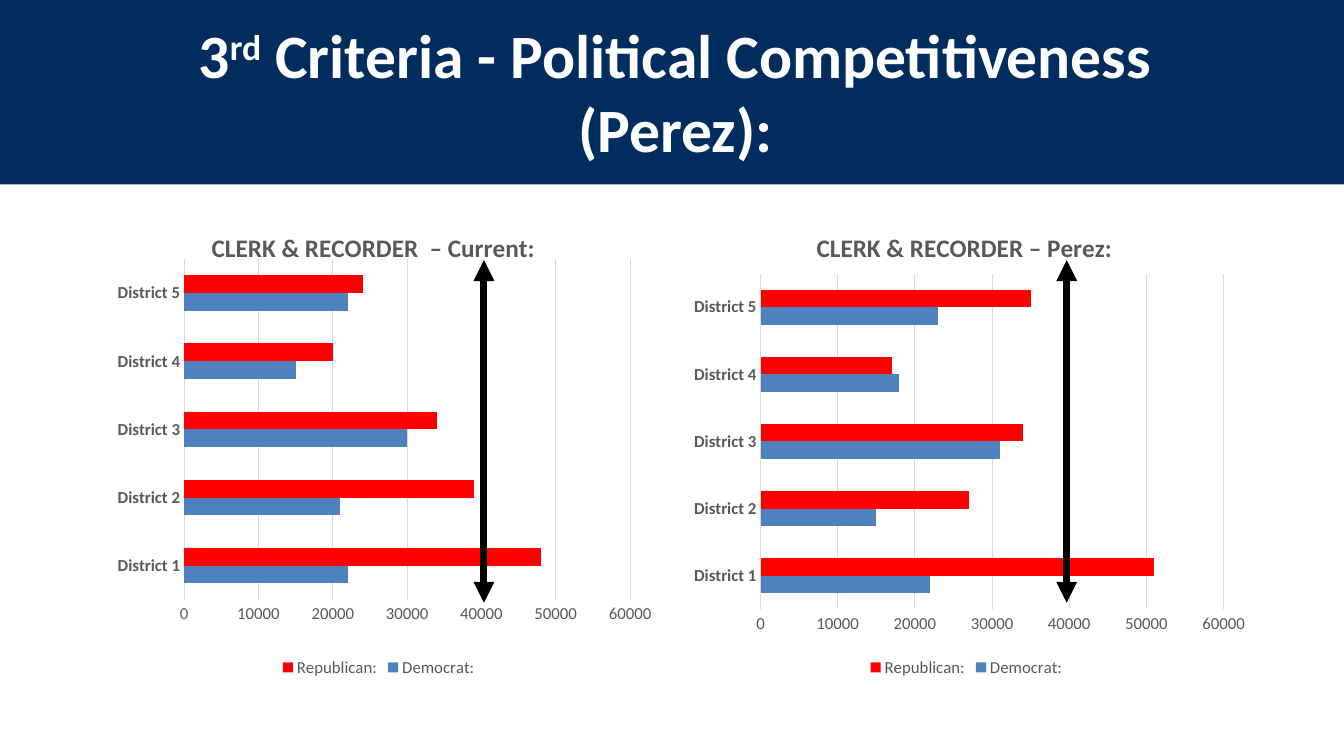
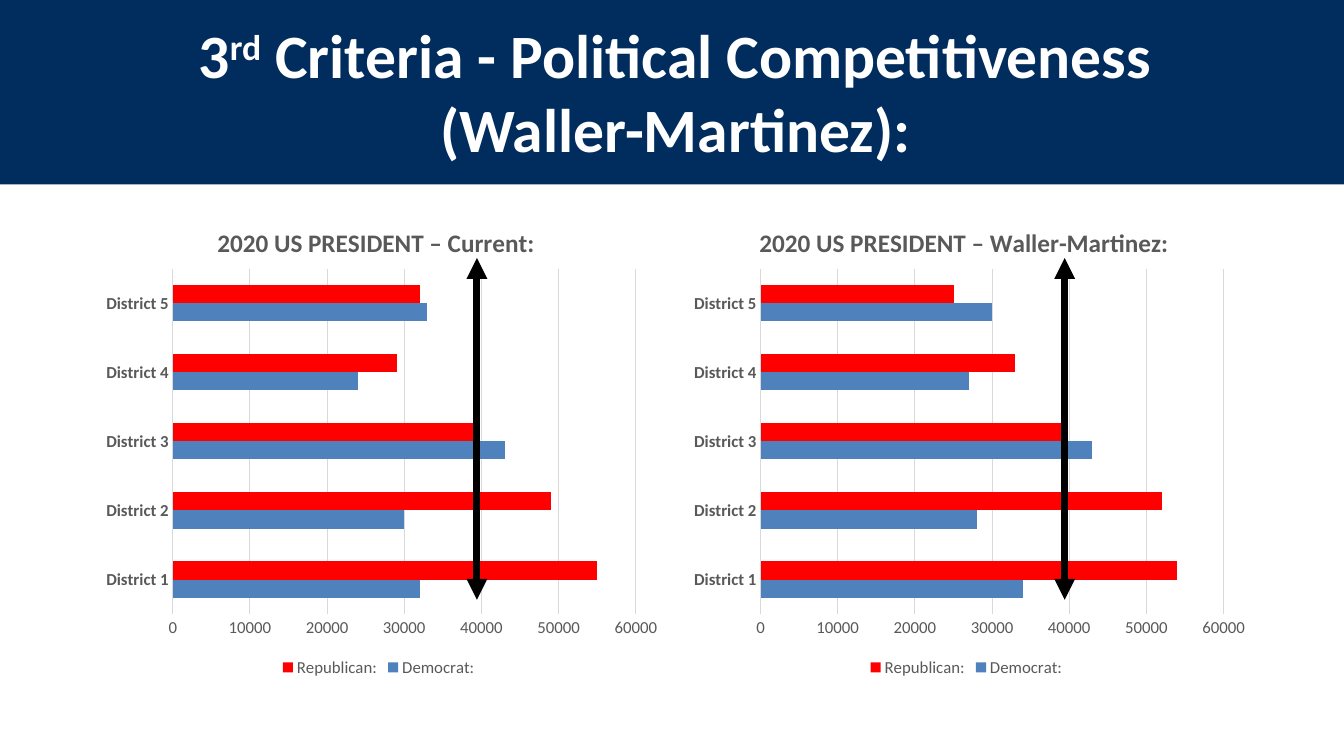
from lxml import etree
from pptx import Presentation
from pptx.chart.data import CategoryChartData
from pptx.dml.color import RGBColor
from pptx.enum.chart import XL_CHART_TYPE, XL_LEGEND_POSITION, XL_TICK_MARK
from pptx.enum.shapes import MSO_CONNECTOR, MSO_SHAPE
from pptx.enum.text import PP_ALIGN
from pptx.oxml.ns import qn
from pptx.util import Pt

PX = 9144
WIDE, HIGH = 1333, 750
FONT = "Calibri"
BARS = XL_CHART_TYPE.BAR_CLUSTERED
BOTTOM = XL_LEGEND_POSITION.BOTTOM
NO_TICK = XL_TICK_MARK.NONE
RECT = MSO_SHAPE.RECTANGLE
LINE = MSO_CONNECTOR.STRAIGHT
CENTER = PP_ALIGN.CENTER
COLORS = {
    "navy": "002D5D",
    "white": "FFFFFF",
    "black": "000000",
    "gray": "595959",
    "grid": "D9D9D9",
    "Democrat:": "4F81BD",
    "Republican:": "FF0000",
}
CATS = [f"District {n}" for n in range(1, 6)]
LEFTS = (92, 675)
CHART_TOP, CHART_WIDE, CHART_HIGH = 200, 567, 476

SLIDES = [
    {
        "plan": "Perez",
        "race": "CLERK & RECORDER",
        "arrow_top": 258,
        "arrow_high": 340,
        "charts": [
            {
                "title": "CLERK & RECORDER  – Current:",
                "spot": (0.2, 0.05),
                "plot": (0.16, 0.12, 0.78, 0.71),
                "arrow": 480,
                "dem": (22000, 21000, 30000, 15000, 22000),
                "rep": (48000, 39000, 34000, 20000, 24000),
            },
            {
                "title": "CLERK & RECORDER – Perez:",
                "spot": (0.23, 0.05),
                "plot": (0.14, 0.15, 0.81, 0.7),
                "arrow": 1058,
                "dem": (22000, 15000, 31000, 18000, 23000),
                "rep": (51000, 27000, 34000, 17000, 35000),
            },
        ],
    },
    {
        "plan": "Waller-Martinez",
        "arrow_top": 256,
        "arrow_high": 339,
        "charts": [
            {
                "title": "2020 US PRESIDENT – Current:",
                "spot": (0.21, 0.04),
                "plot": (0.14, 0.14, 0.81, 0.72),
                "arrow": 473,
                "dem": (32000, 30000, 43000, 24000, 33000),
                "rep": (55000, 49000, 39000, 29000, 32000),
            },
            {
                "title": "2020 US PRESIDENT – Waller-Martinez:",
                "spot": (0.13, 0.04),
                "plot": (0.14, 0.14, 0.81, 0.72),
                "arrow": 1056,
                "dem": (34000, 28000, 43000, 27000, 30000),
                "rep": (54000, 52000, 39000, 33000, 25000),
            },
        ],
    },
]


class Deck:
    """Hold the shared style and the current slide."""

    def __init__(self):
        self.prs = Presentation()
        self.prs.slide_width = WIDE * PX
        self.prs.slide_height = HIGH * PX
        self.slide = None

    def color(self, name):
        """Return a named colour."""
        return RGBColor.from_string(COLORS[name])

    def style(self, font, size, name, bold=False):
        """Apply the deck font."""
        font.name = FONT
        font.size = Pt(size)
        font.bold = bold
        font.color.rgb = self.color(name)

    def fill(self, item, name):
        """Fill an item with a plain colour."""
        item.fill.solid()
        item.fill.fore_color.rgb = self.color(name)

    def page(self, plan):
        """Start a slide with its band and title."""
        self.slide = self.prs.slides.add_slide(self.prs.slide_layouts[6])
        self.band()
        self.title(plan)

    def band(self):
        """Draw the band behind the title."""
        band = self.slide.shapes.add_shape(RECT, 0, -3 * PX, WIDE * PX, 186 * PX)
        band.shadow.inherit = False
        self.fill(band, "navy")
        band.line.fill.background()

    def title(self, plan):
        """Write the two-line title."""
        box = self.slide.shapes.add_textbox(56 * PX, 12 * PX, 1178 * PX, 232 * PX)
        frame = box.text_frame
        frame.word_wrap = True
        first = frame.paragraphs[0]
        for text in ("3", "rd", " Criteria - Political Competitiveness"):
            run = first.add_run()
            run.text = text
            if text == "rd":
                run._r.get_or_add_rPr().set("baseline", "30000")
        frame.add_paragraph().text = f"({plan}):"
        for para in frame.paragraphs:
            para.alignment = CENTER
            para._p.get_or_add_pPr().set("marL", str(50 * PX))
            self.style(para.font, 44, "white", True)

    def place(self, host, index, spot, inner=False):
        """Set a manual layout on a chart part."""
        for old in host.findall(qn("c:layout")):
            host.remove(old)
        layout = etree.Element(qn("c:layout"))
        manual = etree.SubElement(layout, qn("c:manualLayout"))
        parts = [("xMode", "edge"), ("yMode", "edge"), *zip("xywh", spot)]
        if inner:
            parts.insert(0, ("layoutTarget", "inner"))
        for tag, val in parts:
            etree.SubElement(manual, qn(f"c:{tag}")).set("val", str(val))
        host.insert(index, layout)

    def chart(self, left, spec):
        """Add a bar chart of both parties."""
        data = CategoryChartData(number_format="General")
        data.categories = CATS
        data.add_series("Democrat:", spec["dem"])
        data.add_series("Republican:", spec["rep"])
        chart = self.slide.shapes.add_chart(
            BARS, left * PX, CHART_TOP * PX, CHART_WIDE * PX, CHART_HIGH * PX, data
        ).chart
        self.style(chart.font, 10, "black")

        chart.has_title = True
        head = chart.chart_title
        para = head.text_frame.paragraphs[0]
        para.text = spec["title"]
        self.style(para.font, 18, "gray", True)
        self.place(head._element, 1, spec["spot"])

        plot = chart.plots[0]
        plot.gap_width = 182
        plot.vary_by_categories = False
        for series in plot.series:
            self.fill(series.format, series.name)
        area = chart._chartSpace.find(qn("c:chart")).find(qn("c:plotArea"))
        self.place(area, 0, spec["plot"], True)
        self.axes(chart)

        chart.has_legend = True
        chart.legend.position = BOTTOM
        chart.legend.include_in_layout = False
        self.style(chart.legend.font, 12, "gray")

    def axes(self, chart):
        """Format both axes and the grid."""
        cat, val = chart.category_axis, chart.value_axis
        for axis in (cat, val):
            axis.major_tick_mark = NO_TICK
            axis.minor_tick_mark = NO_TICK
            self.style(axis.tick_labels.font, 12, "gray", axis is cat)
        val.minimum_scale, val.maximum_scale = 0, 60000
        val.major_unit = 10000
        val.has_major_gridlines = True
        val.format.line.fill.background()
        for line in (cat.format.line, val.major_gridlines.format.line):
            line.color.rgb = self.color("grid")
            line.width = Pt(0.75)

    def arrow(self, x, top, high):
        """Draw an upright arrow with two heads."""
        arrow = self.slide.shapes.add_connector(
            LINE, x * PX, top * PX, x * PX, (top + high) * PX
        )
        arrow.line.color.rgb = self.color("black")
        arrow.line.width = Pt(5)
        props = arrow._element.spPr
        for end in ("a:headEnd", "a:tailEnd"):
            etree.SubElement(props.find(qn("a:ln")), qn(end)).set("type", "triangle")
        etree.SubElement(props, qn("a:effectLst"))


def main():
    """Build and save the deck."""
    deck = Deck()
    for page in SLIDES:
        deck.page(page["plan"])
        for left, spec in zip(LEFTS, page["charts"]):
            deck.chart(left, spec)
        for spec in page["charts"]:
            deck.arrow(spec["arrow"], page["arrow_top"], page["arrow_high"])
    deck.prs.save("out.pptx")


if __name__ == "__main__":
    main()
